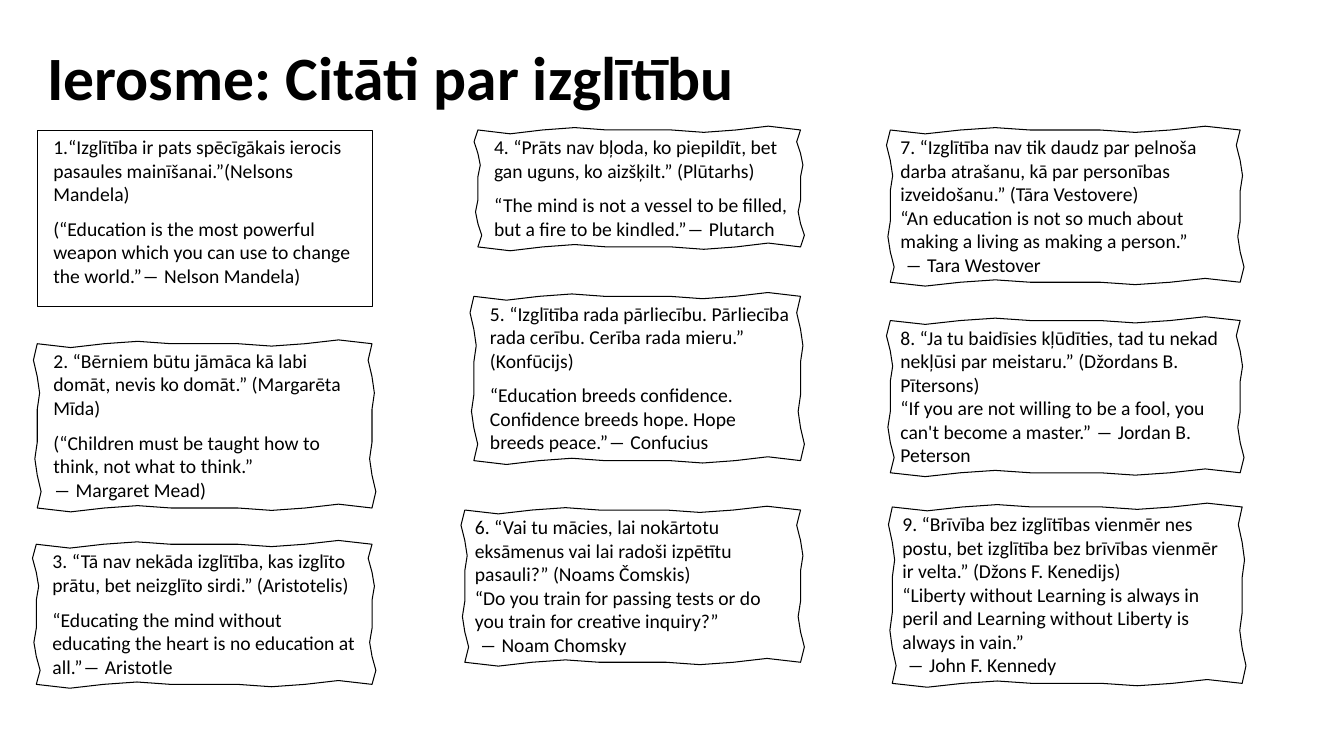
"""Build the slide of nine bordered quotations about education."""
import math
from dataclasses import dataclass
from typing import Any

import lxml.etree
import pptx
import pptx.dml.color
import pptx.enum.shapes
import pptx.enum.text
import pptx.oxml.ns
import pptx.util

Inches = pptx.util.Inches
Point = tuple[float, float]


@dataclass(frozen=True)
class Theme:
    """Colours, type sizes and line measures of the slide."""
    ink: pptx.dml.color.RGBColor = pptx.dml.color.RGBColor(0, 0, 0)
    font: str = "Calibri"
    title_size: int = 44
    quote_size: int = 14
    quote_gap: int = 8
    border: float = 0.75
    wave: float = 0.02
    edge_steps: int = 10
    inset_x: float = 0.1
    inset_y: float = 0.05
    indent: float = 0.06


@dataclass(frozen=True)
class Card:
    """One quotation in Latvian and English inside a border."""
    left: float
    top: float
    width: float
    height: float
    latvian: str
    english: str
    indented: bool = True
    wavy: bool = True
    numbered: bool = False


THEME = Theme()
TITLE = "Ierosme: Citāti par izglītību"
CARDS = [
    Card(0.37, 1.29, 3.32, 1.75,
         "“Izglītība ir pats spēcīgākais ierocis pasaules mainīšanai.”(Nelsons Mandela)",
         "(“Education is the most powerful weapon which you can use to change the world.”― Nelson Mandela)",
         wavy=False, numbered=True),
    Card(0.37, 3.41, 3.32, 1.63,
         "2. “Bērniem būtu jāmāca kā labi domāt, nevis ko domāt.” (Margarēta Mīda)",
         "(“Children must be taught how to think, not what to think.”\n― Margaret Mead)"),
    Card(0.36, 5.4, 3.33, 1.39,
         "3. “Tā nav nekāda izglītība, kas izglīto prātu, bet neizglīto sirdi.” (Aristotelis)",
         "“Educating the mind without educating the heart is no education at all.”― Aristotle"),
    Card(4.74, 1.29, 3.2, 1.16,
         "4. “Prāts nav bļoda, ko piepildīt, bet gan uguns, ko aizšķilt.” (Plūtarhs)",
         "“The mind is not a vessel to be filled, but a fire to be kindled.”― Plutarch"),
    Card(4.7, 2.94, 3.24, 1.63,
         "5. “Izglītība rada pārliecību. Pārliecība rada cerību. Cerība rada mieru.” (Konfūcijs)",
         "“Education breeds confidence. Confidence breeds hope. Hope breeds peace.”― Confucius"),
    Card(4.61, 5.06, 3.33, 1.51,
         "6. “Vai tu mācies, lai nokārtotu eksāmenus vai lai radoši izpētītu pasauli?” (Noams Čomskis)",
         "“Do you train for passing tests or do you train for creative inquiry?”\n ― Noam Chomsky",
         indented=False),
    Card(8.83, 1.29, 3.47, 1.51,
         "7. “Izglītība nav tik daudz par pelnoša darba atrašanu, kā par personības izveidošanu.” (Tāra Vestovere)",
         "“An education is not so much about making a living as making a person.”\n ― Tara Westover",
         indented=False),
    Card(8.83, 3.18, 3.47, 1.51,
         "8. “Ja tu baidīsies kļūdīties, tad tu nekad nekļūsi par meistaru.” (Džordans B. Pītersons)",
         "“If you are not willing to be a fool, you can't become a master.” ― Jordan B. Peterson",
         indented=False),
    Card(8.85, 5.03, 3.47, 1.75,
         "9. “Brīvība bez izglītības vienmēr nes postu, bet izglītība bez brīvības vienmēr ir velta.” (Džons F. Kenedijs)",
         "“Liberty without Learning is always in peril and Learning without Liberty is always in vain.”\n ― John F. Kennedy",
         indented=False),
]


def apply(target: Any, values: dict[str, Any]) -> None:
    """Set each named attribute of the target."""
    for name, value in values.items():
        setattr(target, name, value)


def style_text(para: Any, size: int, bold: bool = False) -> None:
    """Give every run and line break of a paragraph its type."""
    for span in para.runs:
        apply(span.font, {"name": THEME.font, "size": pptx.util.Pt(size), "bold": bold})
        span.font.color.rgb = THEME.ink
    for line_break in para._p.findall(pptx.oxml.ns.qn("a:br")):
        lxml.etree.SubElement(line_break, pptx.oxml.ns.qn("a:rPr"), sz=str(size * 100))


def wavy_edge(start: Point, end: Point) -> list[Point]:
    """Return points along a gently waving edge."""
    across, down = end[0] - start[0], end[1] - start[1]
    length = math.hypot(across, down)
    points = []
    for step in range(1, THEME.edge_steps + 1):
        part = step / THEME.edge_steps
        turn = 2 * math.pi * part
        shift = THEME.wave * (math.sin(2 * turn) + math.sin(3 * turn)) / length
        points.append((start[0] + across * part - down * shift,
                       start[1] + down * part + across * shift))
    return points


def draw_border(page: Any, card: Card) -> Any:
    """Draw the straight or waving outline of a card."""
    if not card.wavy:
        return page.shapes.add_shape(
            pptx.enum.shapes.MSO_SHAPE.RECTANGLE,
            *map(Inches, (card.left, card.top, card.width, card.height)))
    right, bottom = card.left + card.width, card.top + card.height
    corners = [(card.left, card.top), (right, card.top), (right, bottom), (card.left, bottom)]
    outline = [point for start, end in zip(corners, corners[1:] + corners[:1])
               for point in wavy_edge(start, end)]
    builder = page.shapes.build_freeform(Inches(card.left), Inches(card.top))
    builder.add_line_segments([(Inches(x), Inches(y)) for x, y in outline[:-1]], close=True)
    return builder.convert_to_shape()


def draw_card(page: Any, card: Card) -> None:
    """Draw a bordered card and its two paragraphs."""
    box = draw_border(page, card)
    box.shadow.inherit = False
    box.fill.background()
    box.line.color.rgb = THEME.ink
    box.line.width = pptx.util.Pt(THEME.border)
    frame = box.text_frame
    apply(frame, {
        "word_wrap": True,
        "vertical_anchor": pptx.enum.text.MSO_ANCHOR.TOP,
        "margin_left": Inches(card.left + THEME.inset_x) - box.left,
        "margin_top": Inches(card.top + THEME.inset_y) - box.top,
        "margin_right": box.left + box.width - Inches(card.left + card.width - THEME.inset_x),
        "margin_bottom": Inches(THEME.inset_y),
    })
    for order, text in enumerate((card.latvian, card.english)):
        para = frame.add_paragraph() if order else frame.paragraphs[0]
        para.text = text
        para.alignment = pptx.enum.text.PP_ALIGN.LEFT
        properties = para._p.get_or_add_pPr()
        if card.indented:
            properties.set("marL", str(Inches(THEME.indent)))
            properties.set("indent", "0")
        if card.numbered and not order:
            lxml.etree.SubElement(properties, pptx.oxml.ns.qn("a:buFont"), typeface=THEME.font)
            lxml.etree.SubElement(properties, pptx.oxml.ns.qn("a:buAutoNum"), type="arabicPeriod")
        if card.indented and order:
            para.space_before = pptx.util.Pt(THEME.quote_gap)
        style_text(para, THEME.quote_size)


def draw_title(page: Any) -> None:
    """Place and format the title placeholder."""
    title = page.shapes.title
    apply(title, {"left": Inches(0.37), "top": Inches(0.07),
                  "width": Inches(11.5), "height": Inches(1.45)})
    apply(title.text_frame, {"text": TITLE, "word_wrap": True,
                             "auto_size": pptx.enum.text.MSO_AUTO_SIZE.NONE,
                             "vertical_anchor": pptx.enum.text.MSO_ANCHOR.MIDDLE})
    para = title.text_frame.paragraphs[0]
    apply(para, {"alignment": pptx.enum.text.PP_ALIGN.LEFT, "line_spacing": 0.9})
    style_text(para, THEME.title_size, bold=True)


def main() -> None:
    """Build and save the deck."""
    deck = pptx.Presentation()
    apply(deck, {"slide_width": Inches(13.33), "slide_height": Inches(7.5)})
    page = deck.slides.add_slide(deck.slide_layouts.get_by_name("Title Only"))
    draw_title(page)
    for card in CARDS:
        draw_card(page, card)
    deck.save("out.pptx")


if __name__ == "__main__":
    main()
